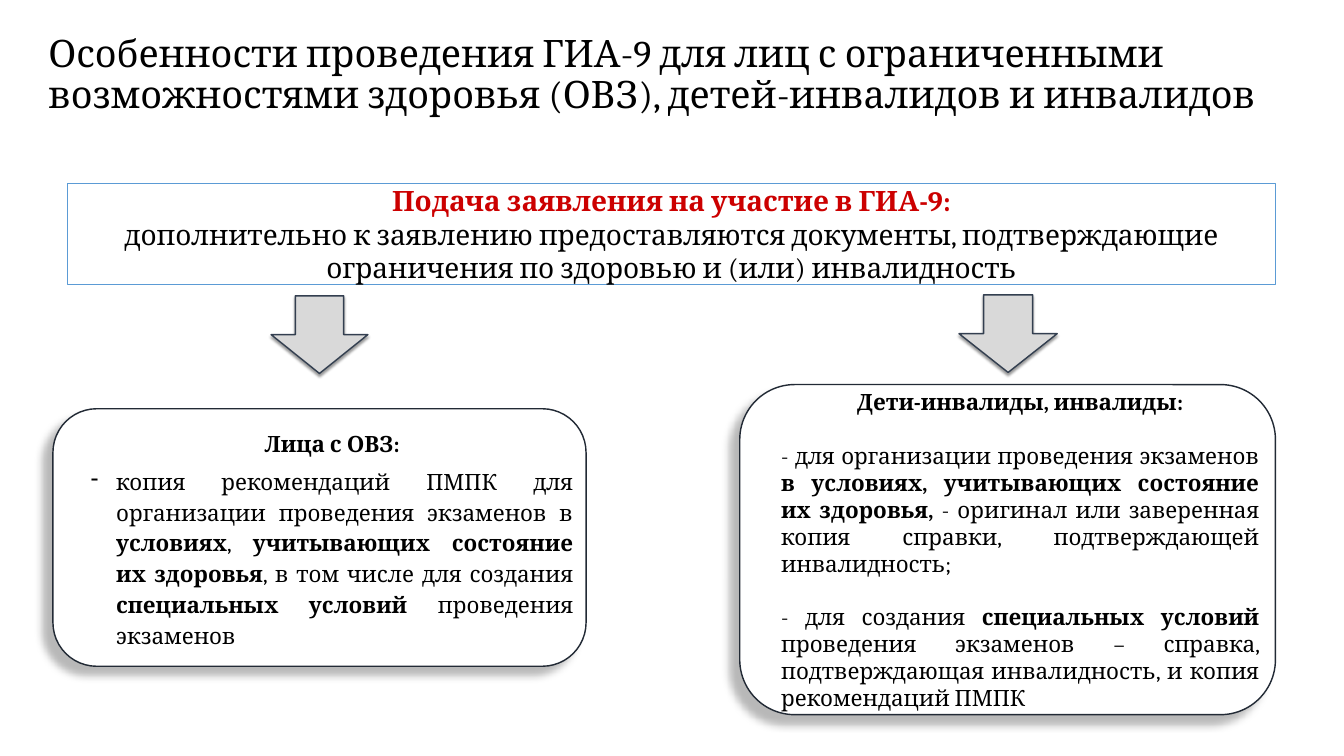
from dataclasses import dataclass
from typing import Optional

from lxml import etree
from pptx import Presentation
from pptx.dml.color import RGBColor
from pptx.enum.shapes import MSO_SHAPE
from pptx.enum.text import MSO_ANCHOR, MSO_AUTO_SIZE, PP_ALIGN
from pptx.oxml.ns import qn
from pptx.util import Inches, Pt

RECT = MSO_SHAPE.RECTANGLE
ROUND = MSO_SHAPE.ROUNDED_RECTANGLE
ARROW = MSO_SHAPE.DOWN_ARROW
LEFT, CENTER, JUSTIFY = PP_ALIGN.LEFT, PP_ALIGN.CENTER, PP_ALIGN.JUSTIFY
MIDDLE = MSO_ANCHOR.MIDDLE
NO_FIT = MSO_AUTO_SIZE.NONE
FONT = "Cambria"
BLACK, WHITE, RED = "000000", "FFFFFF", "CC0000"


@dataclass
class Shadow:
    alpha: int
    blur: float
    dist: float
    angle: int


@dataclass
class Box:
    kind: int
    left: float
    top: float
    width: float
    height: float
    fill: str
    line: str
    weight: float
    shadow: Optional[Shadow] = None
    round: Optional[float] = None


SOFT = Shadow(40, 4, 3, 90)
DEEP = Shadow(28, 11.8, 19.7, 141)

BANNER = Box(RECT, 1.34, 3.63, 23.97, 2.02, WHITE, "5B9BD5", 1)
ARROWS = [
    Box(ARROW, 5.38, 5.87, 1.92, 1.54, "D9D9D9", "333F50", 2, SOFT),
    Box(ARROW, 19.03, 5.85, 1.95, 1.54, "D9D9D9", "333F50", 2, SOFT),
]
HEALTH = Box(ROUND, 1.05, 8.11, 10.58, 5.11, WHITE, "222A35", 2, DEEP, 0.17)
DISABLED = Box(ROUND, 14.68, 7.63, 10.63, 6.55, WHITE, "222A35", 2, DEEP)


def color(value: str) -> RGBColor:
    return RGBColor.from_string(value)


def add_shadow(shape, shadow: Shadow) -> None:
    effects = shape._element.spPr.find(qn("a:effectLst"))
    outer = etree.SubElement(
        effects, qn("a:outerShdw"), blurRad=str(Pt(shadow.blur)),
        dist=str(Pt(shadow.dist)), dir=str(shadow.angle * 60000),
        algn="ctr", rotWithShape="0")
    tint = etree.SubElement(outer, qn("a:srgbClr"), val=BLACK)
    etree.SubElement(tint, qn("a:alpha"), val=str(shadow.alpha * 1000))


def add_box(slide, box: Box):
    shape = slide.shapes.add_shape(
        box.kind, Inches(box.left), Inches(box.top),
        Inches(box.width), Inches(box.height))
    shape.shadow.inherit = False
    shape.fill.solid()
    shape.fill.fore_color.rgb = color(box.fill)
    shape.line.color.rgb = color(box.line)
    shape.line.width = Pt(box.weight)
    if box.round is not None:
        shape.adjustments[0] = box.round
    if box.shadow:
        add_shadow(shape, box.shadow)
    frame = shape.text_frame
    frame.word_wrap = True
    frame.vertical_anchor = MIDDLE
    frame.margin_left = frame.margin_right = 0
    frame.margin_top = frame.margin_bottom = 0
    return frame


def add_text(frame, *parts: str, size: float = 32, tint: str = BLACK,
             bold: bool = False, align: int = CENTER, indent: float = 0,
             hang: float = 0, lines: float = 1, before: float = 0,
             after: float = 0, bullet: str = "") -> None:
    """Parts alternate in weight, and bold sets the weight of the first."""
    para = frame.paragraphs[0]
    if para.runs:
        para = frame.add_paragraph()
    para.alignment = align
    para.line_spacing = lines
    para.space_before = Pt(before)
    para.space_after = Pt(after)
    props = para._p.get_or_add_pPr()
    props.set("marL", str(Inches(indent)))
    props.set("indent", str(Inches(-hang)))
    if bullet:
        etree.SubElement(props, qn("a:buChar"), char=bullet)
    for place, part in enumerate(parts):
        run = para.add_run()
        run.text = part
        run.font.name = FONT
        run.font.size = Pt(size)
        run.font.bold = bold != (place % 2 == 1)
        run.font.color.rgb = color(tint)


def add_title(slide) -> None:
    title = slide.shapes.title
    title.left, title.top = Inches(0.86), Inches(0.25)
    title.width, title.height = Inches(24.72), Inches(2.52)
    frame = title.text_frame
    frame.word_wrap = True
    frame.auto_size = NO_FIT
    frame.vertical_anchor = MIDDLE
    add_text(
        frame,
        "Особенности проведения ГИА-9 для лиц с ограниченными возможностями "
        "здоровья (ОВЗ), детей-инвалидов и инвалидов",
        size=54, align=LEFT, lines=0.9)


def main() -> None:
    deck = Presentation()
    deck.slide_width, deck.slide_height = Inches(26.67), Inches(15)
    slide = deck.slides.add_slide(deck.slide_layouts[5])
    add_title(slide)

    banner = add_box(slide, BANNER)
    add_text(banner, "Подача заявления на участие в ГИА-9:",
             size=40, tint=RED, bold=True)
    add_text(banner,
             "дополнительно к заявлению предоставляются документы, "
             "подтверждающие ограничения по здоровью и (или) инвалидность",
             size=40)

    for arrow in ARROWS:
        add_box(slide, arrow)

    health = add_box(slide, HEALTH)
    add_text(health, "Лица с ОВЗ:", bold=True, indent=0.5,
             lines=1.15, after=10)
    add_text(health,
             "копия рекомендаций ПМПК для организации проведения экзаменов в ",
             "условиях", ", ", "учитывающих состояние их здоровья",
             ", в том числе для создания ", "специальных условий",
             " проведения экзаменов",
             align=JUSTIFY, indent=1, hang=0.5, lines=1.15, after=10,
             bullet="-")

    disabled = add_box(slide, DISABLED)
    add_text(disabled, "Дети-инвалиды, инвалиды:", bold=True, indent=0.5)
    add_text(disabled,
             "- для организации проведения экзаменов ",
             "в условиях, учитывающих состояние их здоровья, ",
             "- оригинал или заверенная копия справки, подтверждающей "
             "инвалидность;",
             align=JUSTIFY, indent=0.5, before=38)
    add_text(disabled,
             "- для создания ", "специальных условий ",
             "проведения экзаменов – справка, подтверждающая инвалидность, "
             "и копия рекомендаций ПМПК",
             align=JUSTIFY, indent=0.5, before=38)

    deck.save("out.pptx")


if __name__ == "__main__":
    main()
